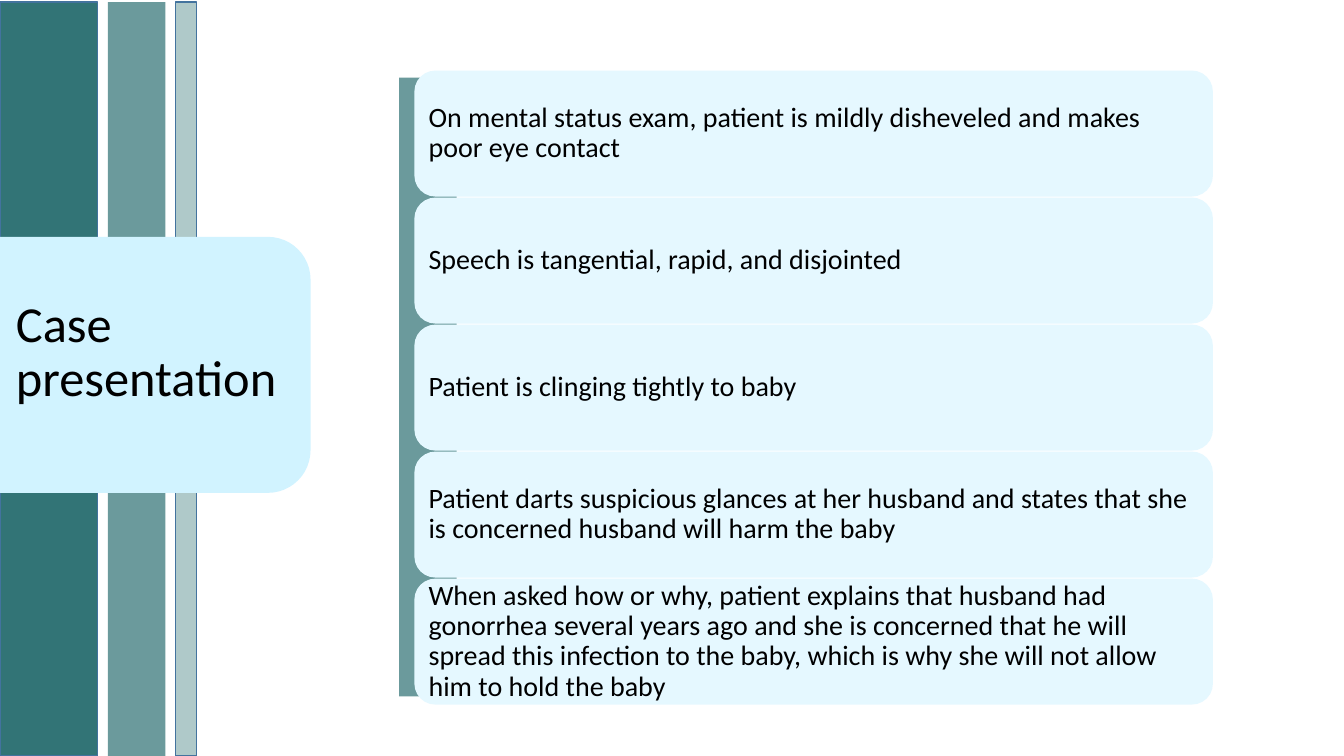
from dataclasses import dataclass
from typing import Optional

from lxml import etree
from pptx import Presentation
from pptx.dml.color import RGBColor
from pptx.enum import shapes, text
from pptx.oxml import ns
from pptx.util import Inches, Pt

TEAL = RGBColor(0x32, 0x74, 0x76)
EDGE_BLUE = RGBColor(0x43, 0x73, 0x9E)
TITLE_BLUE = RGBColor(0xD1, 0xF3, 0xFF)
CARD_BLUE = RGBColor(0xE5, 0xF8, 0xFF)
BLACK = RGBColor(0, 0, 0)
FONT = "Calibri"

RECT = shapes.MSO_SHAPE.RECTANGLE
CARD = shapes.MSO_SHAPE.ROUNDED_RECTANGLE
TAB = shapes.MSO_SHAPE.ROUND_2_SAME_RECTANGLE

CARD_LEFT, CARD_TOP, CARD_PITCH = 4.11, 0.7, 1.26
CARD_WIDTH, CARD_HEIGHT = 7.92, 1.25
FINDINGS = [
    "On mental status exam, patient is mildly disheveled and makes poor eye contact",
    "Speech is tangential, rapid, and disjointed",
    "Patient is clinging tightly to baby",
    "Patient darts suspicious glances at her husband and states that she is "
    "concerned husband will harm the baby",
    "When asked how or why, patient explains that husband had gonorrhea several "
    "years ago and she is concerned that he will spread this infection to the "
    "baby, which is why she will not allow him to hold the baby",
]


@dataclass
class Panel:
    left: float
    top: float
    width: float
    height: float
    fill: RGBColor = TEAL
    opacity: int = 100
    line: Optional[RGBColor] = None
    preset: shapes.MSO_SHAPE = RECT
    rotation: float = 0


BACKDROP = [
    # Vertical stripes, right to left
    Panel(1.74, 0.02, 0.21, 7.48, opacity=39, line=EDGE_BLUE),
    Panel(1.07, 0.02, 0.57, 7.48, opacity=72),
    Panel(0, 0.02, 0.97, 7.48, line=EDGE_BLUE),
    # Title tab, turned so its round corners face right
    Panel(0.27, 2.08, 2.54, 3.08, TITLE_BLUE, preset=TAB, rotation=90),
    # Strip behind the cards
    Panel(3.96, 0.77, 0.57, 6.14, opacity=72),
]


def add_panel(slide, panel: Panel):
    sp = slide.shapes.add_shape(
        panel.preset, Inches(panel.left), Inches(panel.top),
        Inches(panel.width), Inches(panel.height))
    sp.shadow.inherit = False
    sp.rotation = panel.rotation
    sp.fill.solid()
    sp.fill.fore_color.rgb = panel.fill
    if panel.opacity < 100:
        color = sp.fill._xPr.find(".//" + ns.qn("a:srgbClr"))
        etree.SubElement(color, ns.qn("a:alpha"), val=str(panel.opacity * 1000))
    if panel.line is None:
        sp.line.fill.background()
    else:
        sp.line.color.rgb = panel.line
        sp.line.width = Pt(1)
    return sp


def set_text(sp, words: str, size: float) -> None:
    tf = sp.text_frame
    tf.word_wrap = True
    tf.vertical_anchor = text.MSO_ANCHOR.MIDDLE
    p = tf.paragraphs[0]
    p.text = words
    p.alignment = text.PP_ALIGN.LEFT
    p.line_spacing = 0.9
    p.font.name = FONT
    p.font.size = Pt(size)
    p.font.color.rgb = BLACK


def main() -> None:
    prs = Presentation()
    prs.slide_width, prs.slide_height = Inches(13.33), Inches(7.5)
    slide = prs.slides.add_slide(prs.slide_layouts[6])

    for panel in BACKDROP:
        add_panel(slide, panel)

    # Finding cards
    for i, finding in enumerate(FINDINGS):
        card = add_panel(slide, Panel(
            CARD_LEFT, CARD_TOP + i * CARD_PITCH, CARD_WIDTH, CARD_HEIGHT,
            CARD_BLUE, preset=CARD))
        set_text(card, finding, 20)
        tf = card.text_frame
        tf.margin_left = tf.margin_right = Inches(0.08)
        tf.margin_top = tf.margin_bottom = Inches(0.08)

    # Title
    title = slide.shapes.add_textbox(
        Inches(0.06), Inches(2.65), Inches(4.89), Inches(1.71))
    set_text(title, "Case \vpresentation", 36)

    prs.save("out.pptx")


if __name__ == "__main__":
    main()
